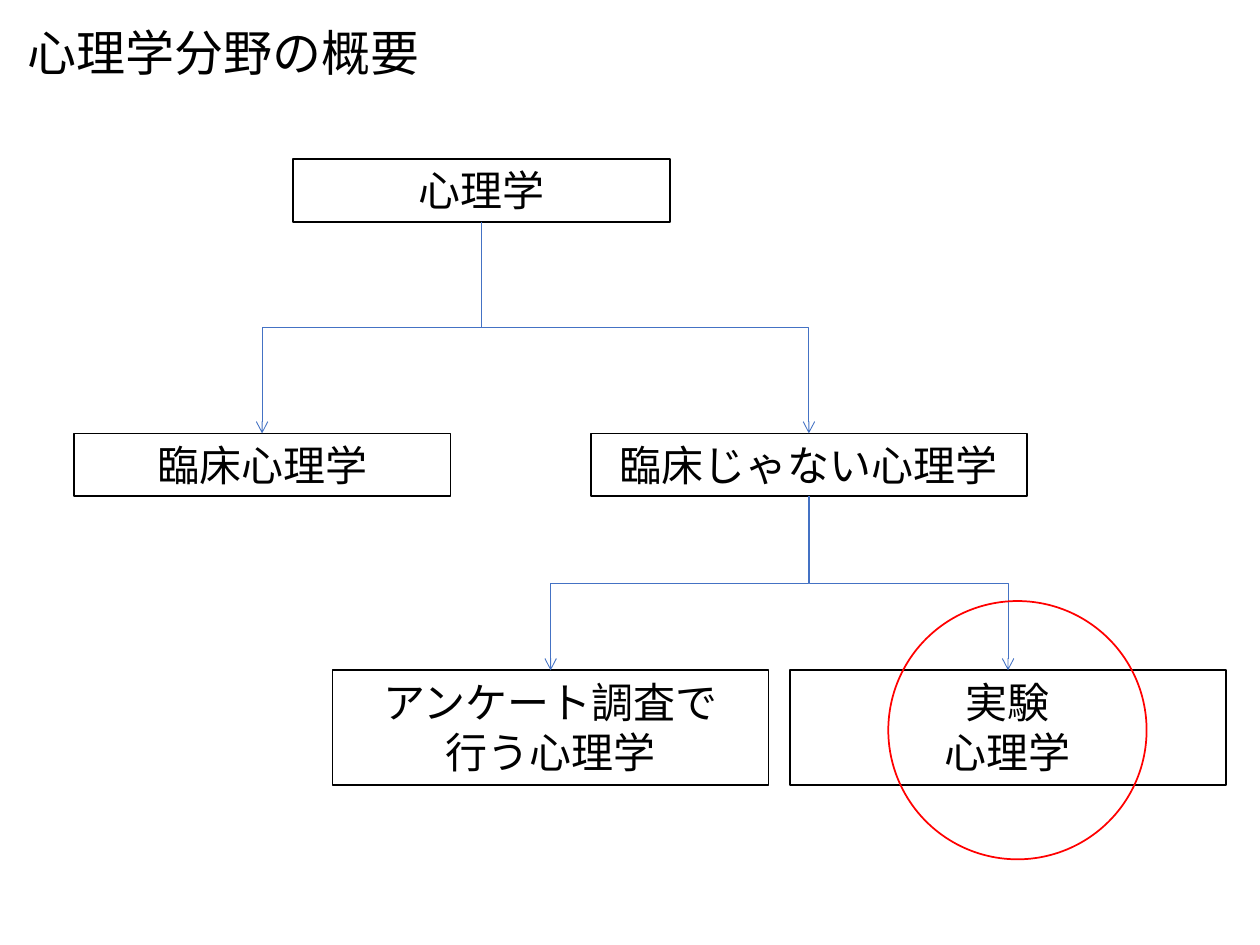
import pptx
import pptx.util
import pptx.dml.color
import pptx.enum.shapes
import pptx.enum.text
import pptx.oxml

Inches, Pt = pptx.util.Inches, pptx.util.Pt
RGBColor = pptx.dml.color.RGBColor
Kind = pptx.enum.shapes.MSO_SHAPE
Align = pptx.enum.text.PP_ALIGN
Anchor = pptx.enum.text.MSO_ANCHOR
Fit = pptx.enum.text.MSO_AUTO_SIZE

BLACK = RGBColor(0x00, 0x00, 0x00)
WHITE = RGBColor(0xFF, 0xFF, 0xFF)
BLUE = RGBColor(0x44, 0x72, 0xC4)
RED = RGBColor(0xFF, 0x00, 0x00)
FONT = "Calibri"

TITLE = "心理学分野の概要"
ROWS = [1.26, 3.44, 5.32]
HIGH = {1: 0.5, 2: 0.91}
NARROW, WIDE = 2.99, 3.46
NODES = {
    "root": (["心理学"], 3.82, 0, NARROW),
    "clinic": (["臨床心理学"], 2.08, 1, NARROW),
    "other": (["臨床じゃない心理学"], 6.42, 1, WIDE),
    "survey": (["アンケート調査で", "行う心理学"], 4.37, 2, WIDE),
    "lab": (["実験", "心理学"], 8, 2, WIDE),
}
LINKS = [("root", "clinic"), ("root", "other"), ("other", "survey"), ("other", "lab")]
RING = (7.05, 4.77, 2.05)


def write(shape, lines, size=24, align=Align.CENTER, anchor=Anchor.MIDDLE, wrap=True):
    frame = shape.text_frame
    frame.text = "\n".join(lines)
    frame.word_wrap = wrap
    frame.auto_size = Fit.SHAPE_TO_FIT_TEXT
    frame.vertical_anchor = anchor
    for para in frame.paragraphs:
        para.alignment = align
        para.font.size = Pt(size)
        para.font.name = FONT
        para.font.color.rgb = BLACK


def draw(slide, kind, spot, color):
    shape = slide.shapes.add_shape(kind, *map(Inches, spot))
    shape.shadow.inherit = False
    shape.line.color.rgb = color
    shape.line.width = Pt(1)
    return shape


def link(slide, start, end):
    (x1, y1), (x2, y2) = start, end
    run, drop = abs(x2 - x1), y2 - y1
    left = (x1 + x2 - drop) / 2
    top = (y1 + y2 - run) / 2
    ends = [left, left + drop]
    turn = 90
    if x2 > x1:
        ends.reverse()
        turn = 270
    bend = slide.shapes.add_connector(
        pptx.enum.shapes.MSO_CONNECTOR.ELBOW,
        Inches(ends[0]), Inches(top), Inches(ends[1]), Inches(top + run))
    bend.line.color.rgb = BLUE
    bend.line.width = Pt(0.5)
    props = bend._element.spPr
    props.xfrm.set("rot", str(turn * 60000))
    tip = pptx.oxml.parse_xml(
        '<a:tailEnd xmlns:a="http://schemas.openxmlformats.org/drawingml/2006/main" type="arrow"/>')
    bend.line._get_or_add_ln().append(tip)
    props.append(pptx.oxml.parse_xml(
        '<a:effectLst xmlns:a="http://schemas.openxmlformats.org/drawingml/2006/main"/>'))


def main():
    deck = pptx.Presentation()
    deck.slide_width, deck.slide_height = Inches(10), Inches(7.5)
    slide = deck.slides.add_slide(deck.slide_layouts[5])

    title = slide.shapes.title
    title.left, title.top = Inches(0.12), Inches(0.13)
    title.width, title.height = Inches(3.34), Inches(0.57)
    write(title, [TITLE], size=28, align=Align.LEFT, anchor=Anchor.TOP, wrap=False)

    heads, feet = {}, {}
    for name, (lines, mid, row, wide) in NODES.items():
        top, high = ROWS[row], HIGH[len(lines)]
        box = draw(slide, Kind.RECTANGLE, (mid - wide / 2, top, wide, high), BLACK)
        box.fill.solid()
        box.fill.fore_color.rgb = WHITE
        write(box, lines, anchor=Anchor.TOP)
        heads[name], feet[name] = (mid, top), (mid, top + high)

    for start, end in LINKS:
        link(slide, feet[start], heads[end])

    left, top, size = RING
    ring = draw(slide, Kind.OVAL, (left, top, size, size), RED)
    ring.fill.background()
    deck.save("out.pptx")


if __name__ == "__main__":
    main()
